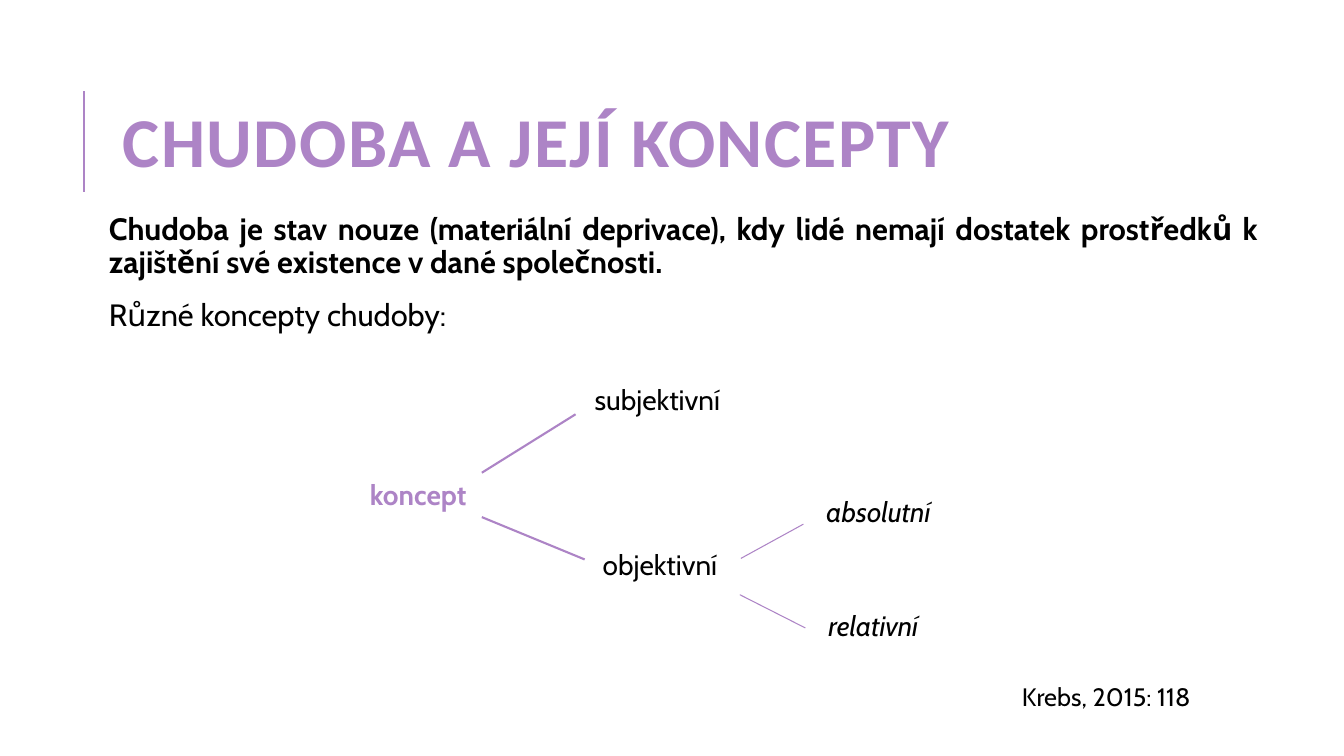
from dataclasses import dataclass

from lxml import etree
from pptx import Presentation
from pptx import util as u
from pptx.dml.color import RGBColor
from pptx.enum import shapes, text
from pptx.oxml.ns import qn

CELL = u.Inches(0.1)
COLUMNS, ROWS = 133.33, 75


@dataclass(frozen=True)
class Theme:
    accent: RGBColor = RGBColor(0xAD, 0x84, 0xC6)
    ink: RGBColor = RGBColor(0, 0, 0)
    paper: RGBColor = RGBColor(0xFF, 0xFF, 0xFF)
    heading_font: str = "Calibri"
    body_font: str = "Cabin"
    title_size: float = 50
    body_size: float = 22
    label_size: float = 20
    source_size: float = 18
    thick: float = 1.5
    thin: float = 0.75


THEME = Theme()


@dataclass(frozen=True)
class Area:
    column: float
    row: float
    columns: float
    rows: float


@dataclass(frozen=True)
class Style:
    size: float
    color: RGBColor = THEME.ink
    font: str = THEME.body_font
    bold: bool = False
    italic: bool = False


@dataclass(frozen=True)
class Label:
    words: str
    area: Area
    style: Style


@dataclass(frozen=True)
class Branch:
    start: tuple[float, float]
    end: tuple[float, float]
    width: float


PLAIN = Style(THEME.label_size)
ITALIC = Style(THEME.label_size, italic=True)
ROOT = Style(THEME.label_size, THEME.accent, bold=True)
HEADING = Style(THEME.title_size, THEME.accent, THEME.heading_font, bold=True)

TITLE_AREA = Area(11.2, 6.4, 106.3, 16.4)
BODY_AREA = Area(9.3, 20.7, 116, 48.4)

BODY = [
    ("Chudoba je stav nouze (materiální deprivace), kdy lidé nemají dostatek "
     "prostředků k zajištění své existence v dané společnosti.",
     Style(THEME.body_size, bold=True), text.PP_ALIGN.JUSTIFY, 0),
    ("Různé koncepty chudoby:",
     Style(THEME.body_size), text.PP_ALIGN.LEFT, 12),
]

LABELS = [
    Label("koncept", Area(35.7, 46.9, 12.1, 4.4), ROOT),
    Label("subjektivní", Area(58, 37.5, 21.9, 4.4), PLAIN),
    Label("objektivní", Area(58.8, 53.8, 15.7, 4.4), PLAIN),
    Label("absolutní", Area(81, 48.6, 23.6, 4.4), ITALIC),
    Label("relativní", Area(81.2, 59.9, 23.6, 4.4), ITALIC),
    Label("Krebs, 2015: 118", Area(100.4, 67.1, 24.2, 4), Style(THEME.source_size)),
]

BRANCHES = [
    Branch((8.3, 19), (8.3, 9), THEME.thick),
    Branch((47.8, 46.9), (57.1, 41.1), THEME.thick),
    Branch((47.8, 51.3), (58, 55.5), THEME.thick),
    Branch((73.5, 55.4), (79.7, 52), THEME.thin),
    Branch((73.4, 59), (79.9, 62.3), THEME.thin),
]


def cells(count: float) -> int:
    return round(count * CELL)


def place(shape, area: Area) -> None:
    shape.left, shape.top = cells(area.column), cells(area.row)
    shape.width, shape.height = cells(area.columns), cells(area.rows)


def format_runs(para, style: Style) -> None:
    for span in para.runs:
        span.font.name = style.font
        span.font.size = u.Pt(style.size)
        span.font.bold = style.bold
        span.font.italic = style.italic
        span.font.color.rgb = style.color


def fill_title(title) -> None:
    place(title, TITLE_AREA)
    frame = title.text_frame
    frame.text = "CHUDOBA A JEJÍ KONCEPTY"
    frame.auto_size = text.MSO_AUTO_SIZE.NONE
    frame.vertical_anchor = text.MSO_ANCHOR.MIDDLE
    para = frame.paragraphs[0]
    para.alignment = text.PP_ALIGN.LEFT
    para.line_spacing = 0.8
    format_runs(para, HEADING)
    para.runs[0].font._element.set("spc", "100")


def fill_body(body) -> None:
    place(body, BODY_AREA)
    frame = body.text_frame
    frame.text = "\n".join(words for words, *_ in BODY)
    frame.auto_size = text.MSO_AUTO_SIZE.NONE
    frame.vertical_anchor = text.MSO_ANCHOR.TOP
    frame.margin_left = frame.margin_right = u.Inches(0.05)
    frame.margin_top = frame.margin_bottom = u.Inches(0.05)
    for para, (_, style, alignment, space_before) in zip(frame.paragraphs, BODY):
        properties = para._p.get_or_add_pPr()
        properties.set("marL", str(CELL))
        properties.set("indent", "0")
        etree.SubElement(properties, qn("a:buNone"))
        para.alignment = alignment
        para.line_spacing = 0.9
        para.space_before = u.Pt(space_before)
        para.space_after = u.Pt(2)
        format_runs(para, style)


def draw_label(page, label: Label) -> None:
    box = page.shapes.add_textbox(0, 0, 0, 0)
    place(box, label.area)
    frame = box.text_frame
    frame.word_wrap = True
    frame.text = label.words
    frame.auto_size = text.MSO_AUTO_SIZE.SHAPE_TO_FIT_TEXT
    format_runs(frame.paragraphs[0], label.style)


def draw_branch(page, branch: Branch) -> None:
    line = page.shapes.add_connector(
        shapes.MSO_CONNECTOR.STRAIGHT,
        *map(cells, branch.start), *map(cells, branch.end))
    line.line.color.rgb = THEME.accent
    line.line.width = u.Pt(branch.width)
    etree.SubElement(line._element.spPr, qn("a:effectLst"))


def main() -> None:
    deck = Presentation()
    deck.slide_width, deck.slide_height = cells(COLUMNS), cells(ROWS)
    page = deck.slides.add_slide(deck.slide_layouts[1])
    page.background.fill.solid()
    page.background.fill.fore_color.rgb = THEME.paper
    fill_title(page.shapes.title)
    fill_body(page.placeholders[1])
    for branch in BRANCHES:
        draw_branch(page, branch)
    for label in LABELS:
        draw_label(page, label)
    deck.save("out.pptx")


if __name__ == "__main__":
    main()
